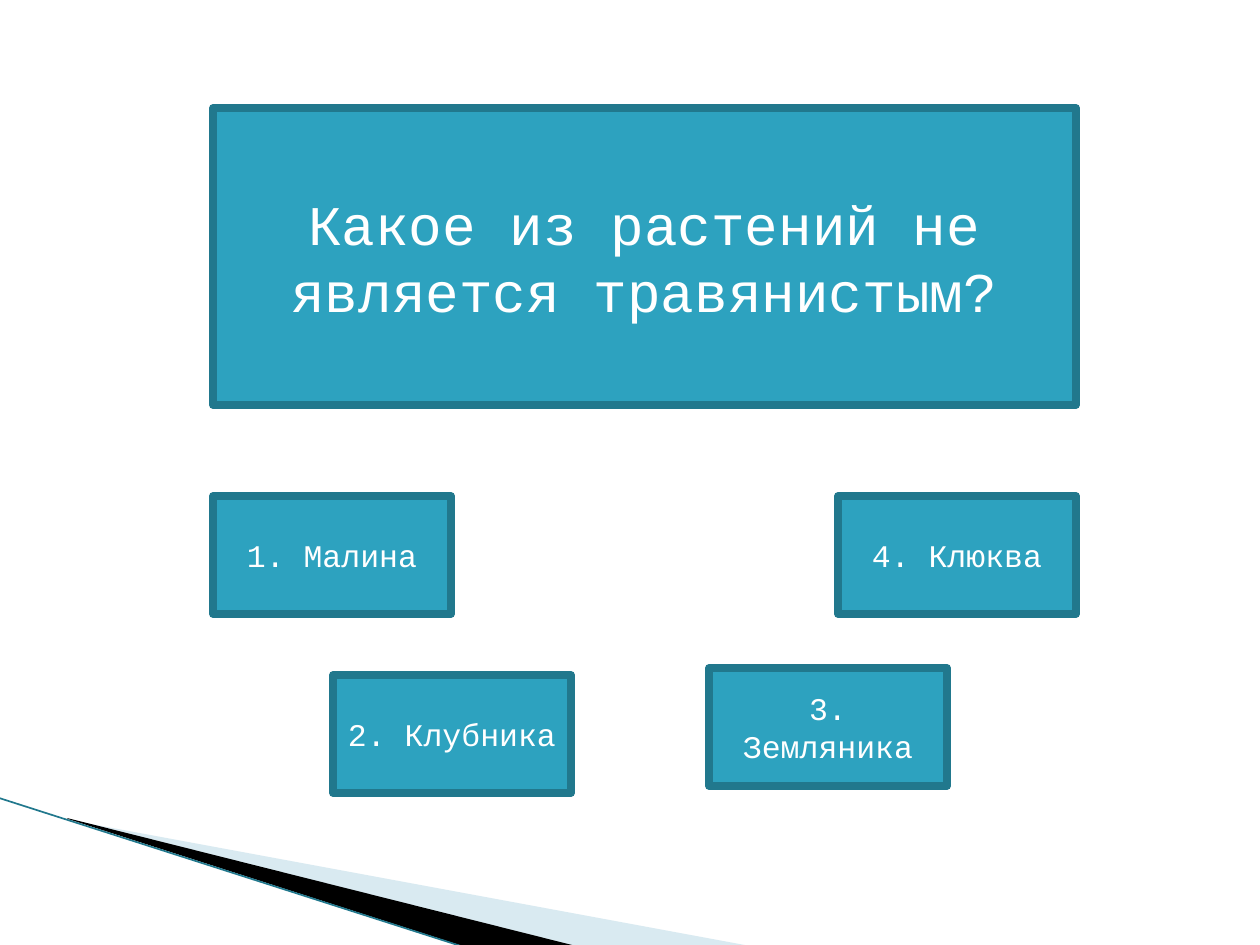
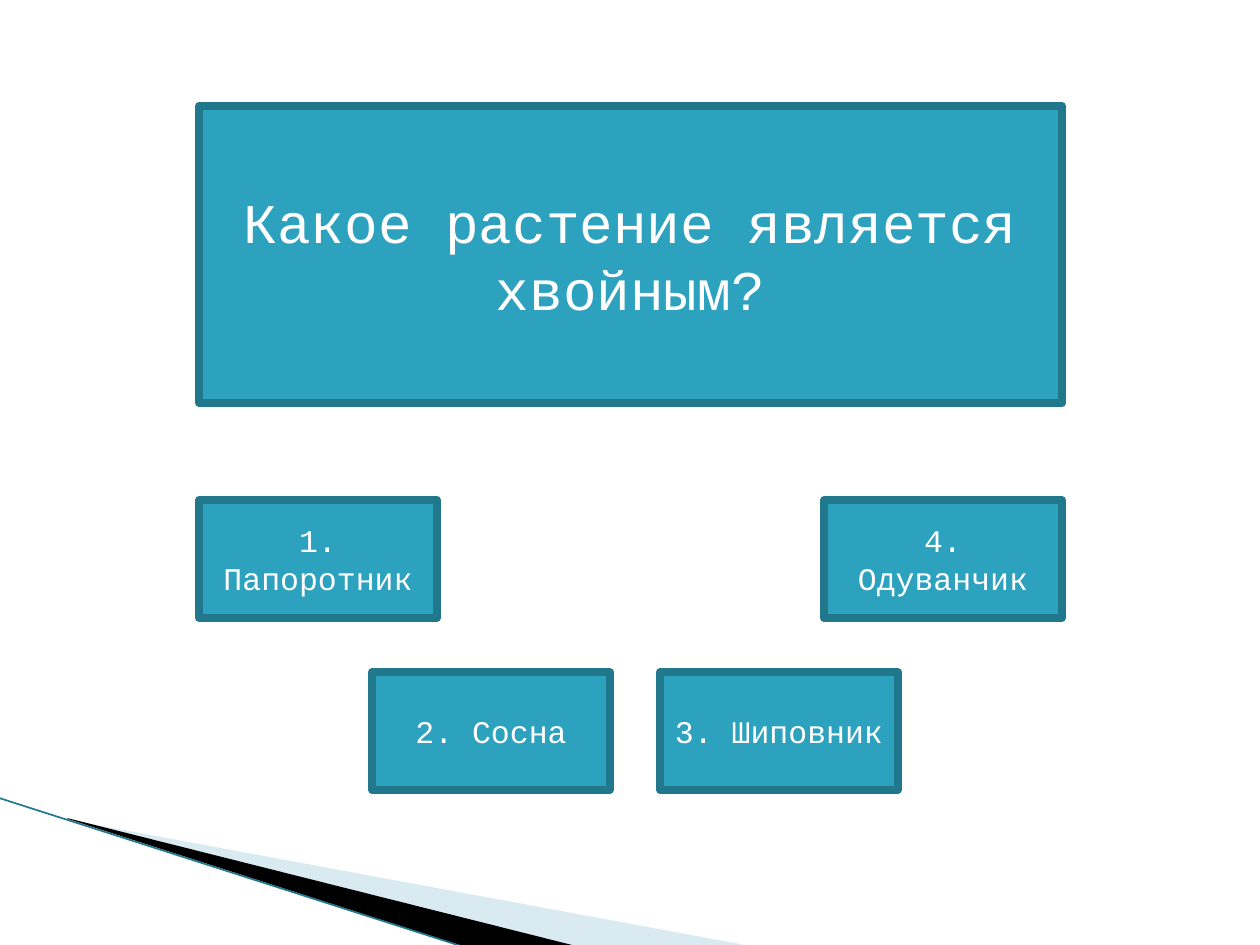
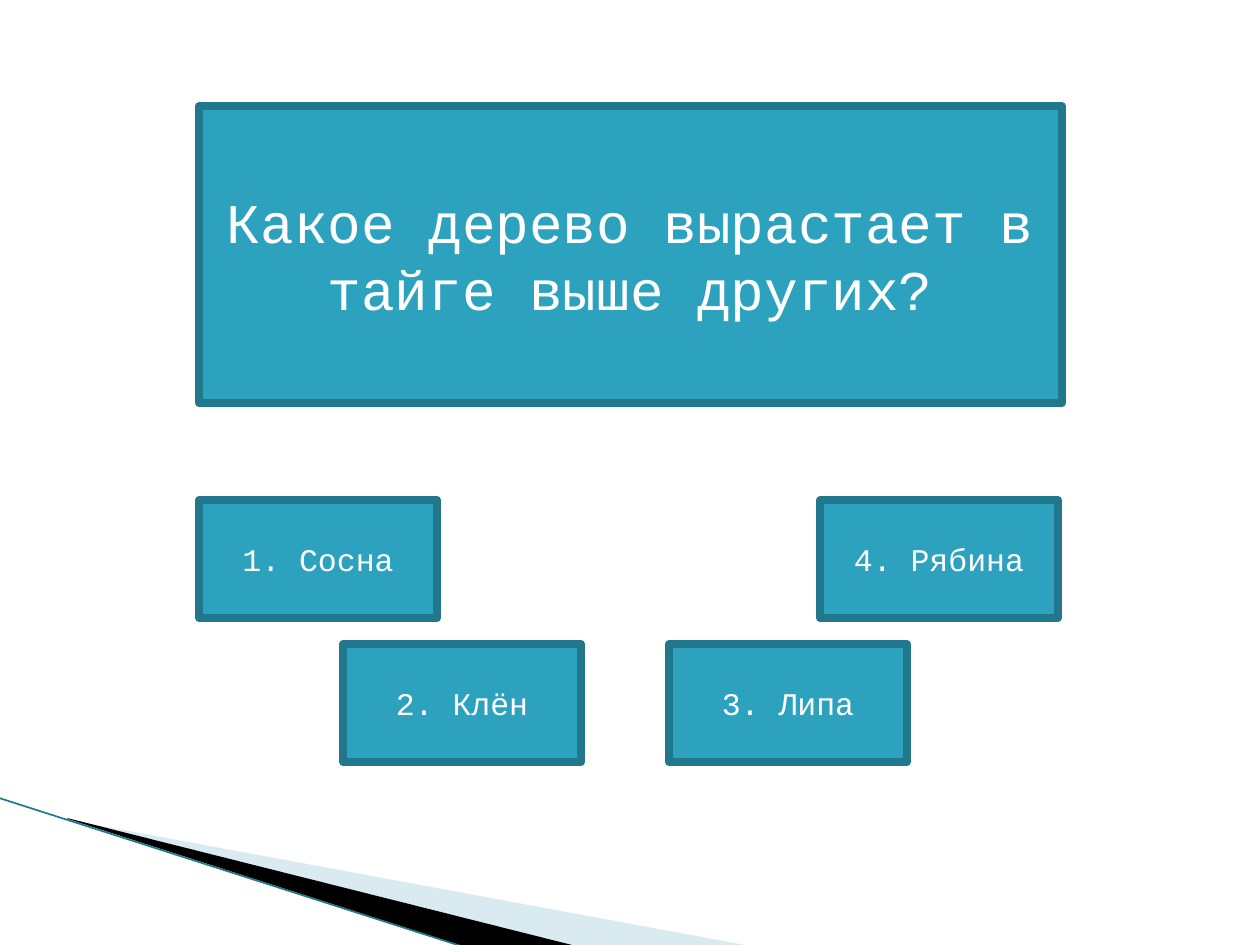
from lxml.etree import SubElement
from pptx import Presentation
from pptx.dml.color import RGBColor
from pptx.enum.shapes import MSO_CONNECTOR as LINK, MSO_SHAPE as SHAPE
from pptx.enum.text import MSO_ANCHOR as ANCHOR, PP_ALIGN as ALIGN
from pptx.oxml.ns import qn
from pptx.util import Pt

PX = 914400 / 126
TEAL = RGBColor(0x2D, 0xA2, 0xBF)
EDGE = RGBColor(0x21, 0x78, 0x8D)
PALE = RGBColor(0xA0, 0xCB, 0xDC)
BLACK = RGBColor(0, 0, 0)
WHITE = RGBColor(255, 255, 255)
FONT = "Courier New"

WIDE, TALL = 1260, 945
ASK_SIZE = 863, 297
REPLY_SIZE = 238, 118

# Question, its corner, then each answer with its corner
QUIZ = [
    ("Какое из растений не является травянистым?", (213, 108), [
        ("Малина", (213, 496)), ("Клубника", (333, 675)),
        ("Земляника", (709, 668)), ("Клюква", (838, 496))]),
    ("Какое растение является хвойным?", (199, 106), [
        ("Папоротник", (199, 500)), ("Сосна", (372, 672)),
        ("Шиповник", (660, 672)), ("Одуванчик", (824, 500))]),
    ("Какое дерево вырастает в тайге выше других?", (199, 106), [
        ("Сосна", (199, 500)), ("Клён", (343, 644)),
        ("Липа", (669, 644)), ("Рябина", (820, 500))]),
]


def emu(*sizes):
    return [round(size * PX) for size in sizes]


def write(shape, text, size=18, color=WHITE, align=ALIGN.CENTER, anchor=ANCHOR.MIDDLE):
    frame = shape.text_frame
    frame.word_wrap = True
    frame.vertical_anchor = anchor
    para = frame.paragraphs[0]
    para.alignment = align
    run = para.add_run()
    run.text = text
    run.font.name = FONT
    run.font.size = Pt(size)
    run.font.color.rgb = color


def add_card(slide, text, spot, area, **style):
    card = slide.shapes.add_shape(SHAPE.RECTANGLE, *emu(*spot, *area))
    card.shadow.inherit = False
    card.fill.solid()
    card.fill.fore_color.rgb = TEAL
    card.line.color.rgb = EDGE
    card.line.width = Pt(4.33)
    write(card, text, **style)


def add_wedge(slide, points, color, alpha=100):
    pen = slide.shapes.build_freeform(*points[0], scale=PX)
    pen.add_line_segments(points[1:], close=True)
    wedge = pen.convert_to_shape()
    wedge.shadow.inherit = False
    wedge.fill.solid()
    wedge.fill.fore_color.rgb = color
    wedge.line.fill.background()
    if alpha < 100:
        tint = wedge.fill._xPr.find(".//" + qn("a:srgbClr"))
        SubElement(tint, qn("a:alpha"), val=str(alpha * 1000))


def add_line(slide, start, end, color, width):
    line = slide.shapes.add_connector(LINK.STRAIGHT, *emu(*start, *end))
    line.line.color.rgb = color
    line.line.width = Pt(width)
    SubElement(line._element.spPr, qn("a:effectLst"))


def add_swoosh(slide):
    """Draw the corner decoration that every slide shares."""
    add_wedge(slide, [(69, 820), (750, 946), (575, 946), (69, 819)], PALE, alpha=40)
    add_wedge(slide, [(67, 818), (576, 946), (469, 948), (68, 819)], BLACK)
    add_line(slide, (-1, 798), (467, 948), EDGE, 0.95)


def main():
    deck = Presentation()
    deck.slide_width, deck.slide_height = emu(WIDE, TALL)
    blank = deck.slide_layouts[6]
    for ask, spot, replies in QUIZ:
        slide = deck.slides.add_slide(blank)
        add_swoosh(slide)
        add_card(slide, ask, spot, ASK_SIZE, size=32)
        for num, (reply, place) in enumerate(replies, 1):
            add_card(slide, f"{num}. {reply}", place, REPLY_SIZE)
    deck.save("out.pptx")


if __name__ == "__main__":
    main()
